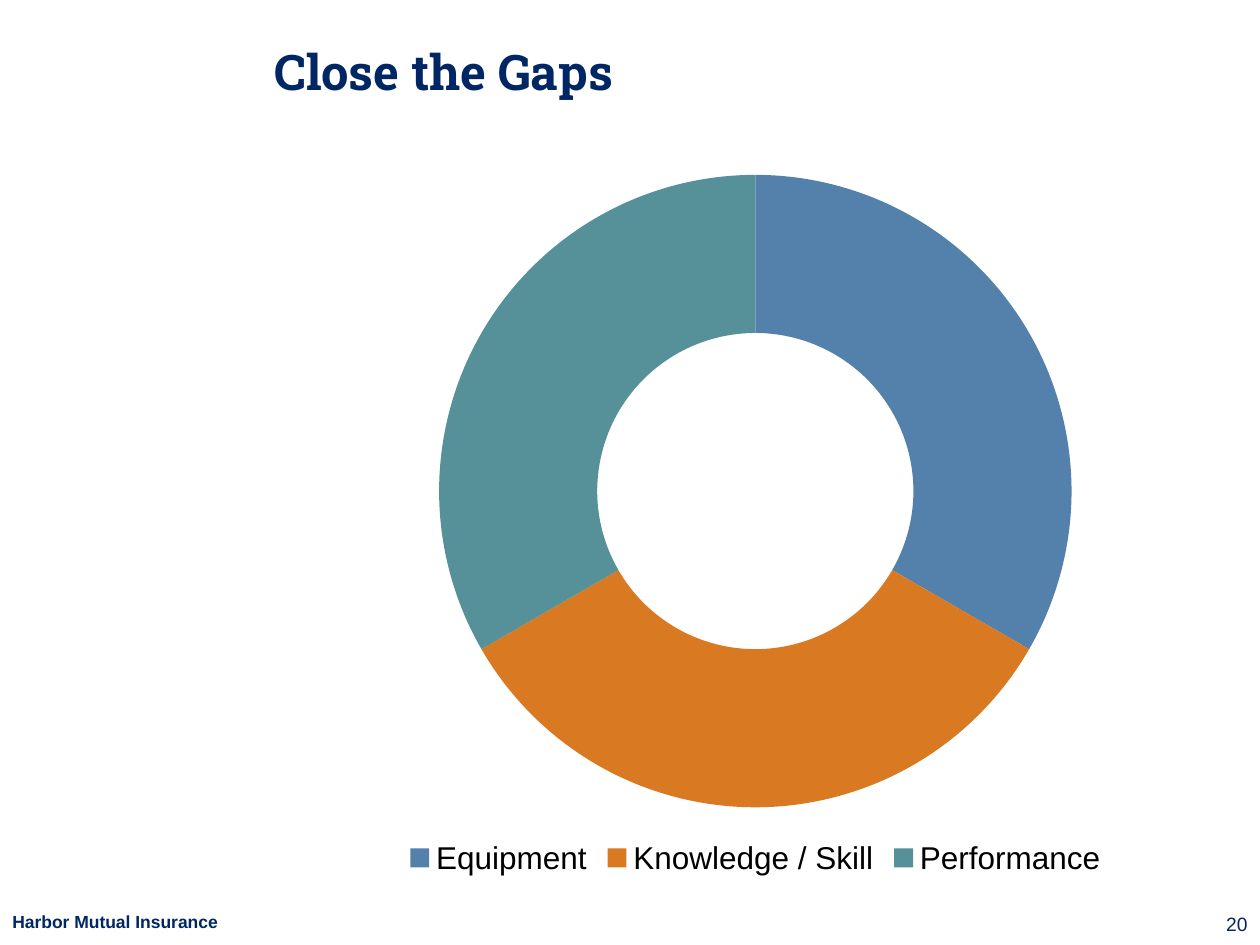
from pptx import Presentation
from pptx.chart.data import CategoryChartData
from pptx.dml.color import RGBColor
from pptx.enum.chart import XL_CHART_TYPE, XL_LEGEND_POSITION
from pptx.enum.text import MSO_ANCHOR, PP_ALIGN
from pptx.util import Inches, Pt

RING = XL_CHART_TYPE.DOUGHNUT
BOTTOM = XL_LEGEND_POSITION.BOTTOM
MIDDLE = MSO_ANCHOR.MIDDLE
LEFT, RIGHT = PP_ALIGN.LEFT, PP_ALIGN.RIGHT

THEME = {
    "navy": "002663", "black": "000000",
    "head": "Roboto Slab", "body": "Arial",
    "title": 28, "legend": 18, "foot": 10, "page": 11,
}

# text, box, font, size, bold, alignment, side inset, line spacing
TEXTS = [
    ("Close the Gaps", (2.08, 0.05, 7.83, 1.03), "head", "title", True, LEFT, 0.1, 1),
    ("Harbor Mutual Insurance", (0, 7.15, 1.9, 0.36), "body", "foot", True, LEFT, 0.1, 0.85),
    ("20", (9.42, 7.22, 0.58, 0.26), "body", "page", False, RIGHT, 0.1, 0.85),
]

GAPS = [
    ("Equipment", 33, "5381AC"),
    ("Knowledge / Skill", 33, "D97A23"),
    ("Performance", 33, "569099"),
]
CHART_BOX = (2.08, 1.25, 7.83, 5.75)


def style(font, face, size, color, bold=False):
    font.name = THEME[face]
    font.size = Pt(THEME[size])
    font.color.rgb = RGBColor.from_string(THEME[color])
    font.bold = bold


def add_text(slide, text, box, face, size, bold, align, inset, spacing):
    frame = slide.shapes.add_textbox(*map(Inches, box)).text_frame
    frame.word_wrap = True
    frame.vertical_anchor = MIDDLE
    frame.margin_left = frame.margin_right = Inches(inset)
    frame.margin_top = frame.margin_bottom = 0
    para = frame.paragraphs[0]
    para.text = text
    para.alignment = align
    para.line_spacing = spacing
    style(para.font, face, size, "navy", bold)


def add_ring(slide):
    names, values, colors = zip(*GAPS)
    data = CategoryChartData()
    data.categories = names
    data.add_series("Series 1", values)
    chart = slide.shapes.add_chart(RING, *map(Inches, CHART_BOX), data).chart
    style(chart.font, "body", "legend", "black")
    chart.has_title = False
    chart.has_legend = True
    chart.legend.position = BOTTOM
    chart.legend.include_in_layout = False
    plot = chart.plots[0]
    plot.vary_by_categories = True
    for i, color in enumerate(colors):
        fmt = plot.series[0].points[i].format
        fmt.fill.solid()
        fmt.fill.fore_color.rgb = RGBColor.from_string(color)
        fmt.line.fill.background()


def main():
    deck = Presentation()
    deck.slide_width, deck.slide_height = Inches(10), Inches(7.5)
    slide = deck.slides.add_slide(deck.slide_layouts[6])
    for item in TEXTS:
        add_text(slide, *item)
    add_ring(slide)
    deck.save("out.pptx")


if __name__ == "__main__":
    main()
